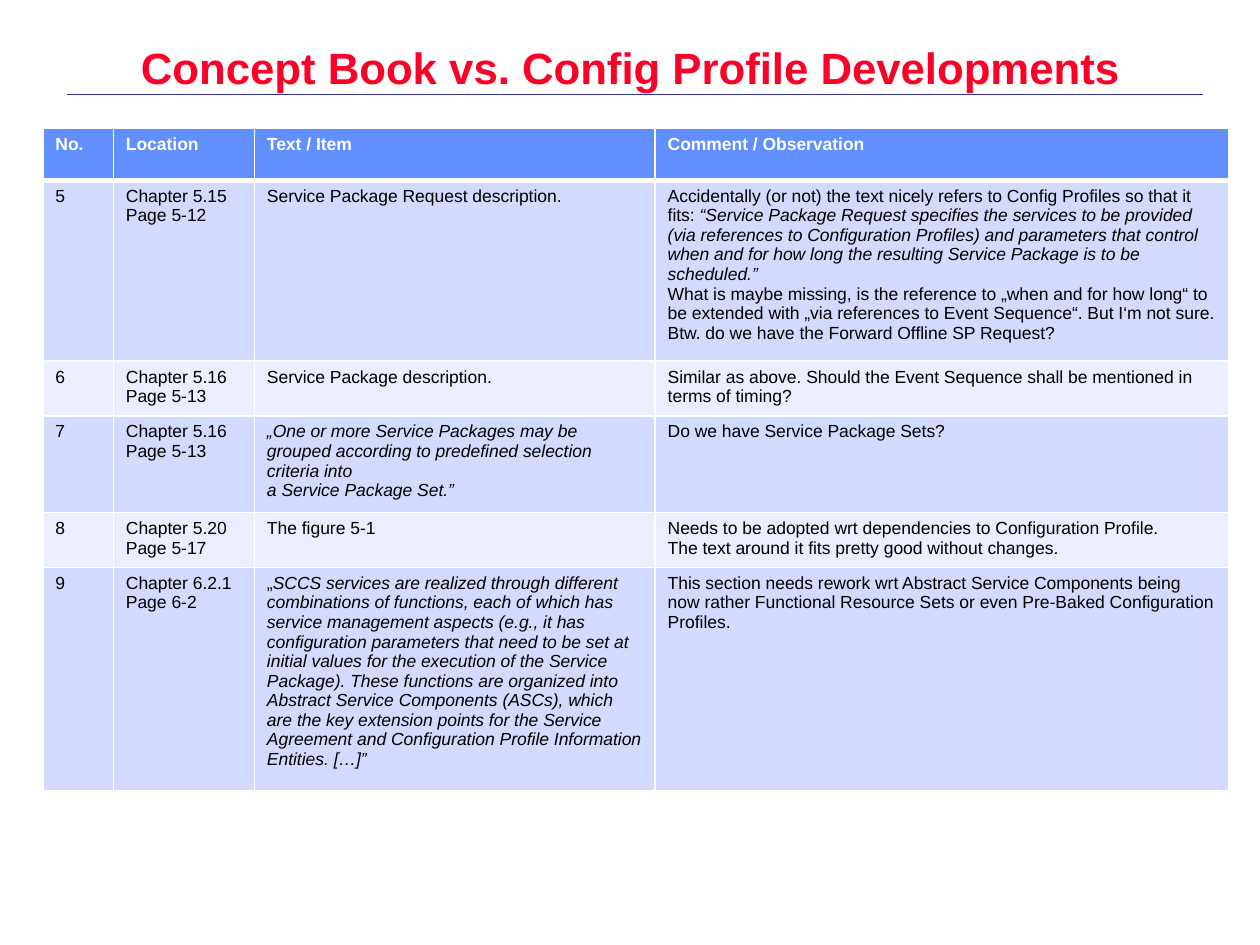
from lxml.etree import SubElement
from pptx import Presentation
from pptx.dml.color import RGBColor
from pptx.enum.shapes import MSO_CONNECTOR
from pptx.enum.text import MSO_ANCHOR, PP_ALIGN
from pptx.oxml.ns import qn
from pptx.util import Pt

COLORS = {
    "title": "FC0128",
    "rule": "333399",
    "header": "618FFD",
    "odd": "D2DBFE",
    "even": "EAEEFF",
    "white": "FFFFFF",
    "black": "000000",
}
COLUMN_WIDTHS = [40.3, 80.6, 229, 327.6]
ROW_HEIGHT = 29.6
HEADINGS = ["No.", "Location", "Text / Item", "Comment / Observation"]
FINDINGS = [
    [
        "5",
        "Chapter 5.15\nPage 5-12",
        "Service Package Request description.",
        "Accidentally (or not) the text nicely refers to Config Profiles so that it fits: "
        "*“Service Package Request specifies the services to be provided (via references to "
        "Configuration Profiles) and parameters that control when and for how long the "
        "resulting Service Package is to be scheduled.”*\n"
        "What is maybe missing, is the reference to „when and for how long“ to be extended "
        "with „via references to Event Sequence“. But I‘m not sure. "
        "Btw. do we have the Forward Offline SP Request?",
    ],
    [
        "6",
        "Chapter 5.16\nPage 5-13",
        "Service Package description.",
        "Similar as above. Should the Event Sequence shall be mentioned in terms of timing?",
    ],
    [
        "7",
        "Chapter 5.16\nPage 5-13",
        "*„One or more Service Packages may be grouped according to predefined selection "
        "criteria into*\n*a Service Package Set.”*",
        "Do we have Service Package Sets?",
    ],
    [
        "8",
        "Chapter 5.20\nPage 5-17",
        "The figure 5-1",
        "Needs to be adopted wrt dependencies to Configuration Profile.\n"
        "The text around it fits pretty good without changes.",
    ],
    [
        "9",
        "Chapter 6.2.1\nPage 6-2",
        "„*SCCS services are realized through different combinations of functions, each of "
        "which has*\n*service management aspects (e.g., it has configuration parameters that "
        "need to be set at initial values for the execution of the Service Package). These "
        "functions are organized into Abstract Service Components (ASCs), which are the key "
        "extension points for the Service Agreement and Configuration Profile Information "
        "Entities. […]”*",
        "This section needs rework wrt Abstract Service Components being now rather "
        "Functional Resource Sets or even Pre-Baked Configuration Profiles.",
    ],
]


def rgb(name):
    """Return the named colour."""
    return RGBColor.from_string(COLORS[name])


def format_font(font, color, **values):
    """Apply the colour and the given values to a font."""
    font.color.rgb = rgb(color)
    for key, value in {"name": "Arial", **values}.items():
        setattr(font, key, value)


def write_text(frame, text, color, **values):
    """Write lines as paragraphs, with asterisks around italic passages."""
    for index, line in enumerate(text.split("\n")):
        paragraph = frame.paragraphs[0] if index == 0 else frame.add_paragraph()
        for position, passage in enumerate(line.split("*")):
            if passage:
                run = paragraph.add_run()
                run.text = passage
                format_font(run.font, color, italic=position % 2 == 1, **values)


def add_heading(slide, left, top, width, height):
    """Place the slide title and the thin rule beneath it."""
    rule_top = top + 32.4
    rule = slide.shapes.add_connector(
        MSO_CONNECTOR.STRAIGHT, Pt(left + 2.2), Pt(rule_top), Pt(left + 651.6), Pt(rule_top)
    )
    rule.line.color.rgb = rgb("rule")
    rule.line.width = Pt(0.13)
    SubElement(rule.line._get_or_add_ln().getparent(), qn("a:effectLst"))

    title = slide.shapes.add_textbox(Pt(left), Pt(top), Pt(width), Pt(height)).text_frame
    layout = {"word_wrap": True, "vertical_anchor": MSO_ANCHOR.TOP, "margin_top": Pt(5)}
    for key, value in layout.items():
        setattr(title, key, value)
    write_text(title, "Concept Book vs. Config Profile Developments", "title",
               size=Pt(25), bold=True)
    title.paragraphs[0].alignment = PP_ALIGN.CENTER
    title.paragraphs[0].line_spacing = 0.9


def add_borders(cell, top, bottom):
    """Draw white borders around a cell."""
    properties = cell._tc.get_or_add_tcPr()
    for side, width in {"L": 1, "R": 1, "T": top, "B": bottom}.items():
        border = SubElement(properties, qn(f"a:ln{side}"), w=str(Pt(width)))
        fill = SubElement(border, qn("a:solidFill"))
        SubElement(fill, qn("a:srgbClr"), val=COLORS["white"])


def add_findings(slide, left, top):
    """Place the table of comments on the concept book."""
    rows = [HEADINGS, *FINDINGS]
    table = slide.shapes.add_table(
        len(rows), len(HEADINGS), Pt(left), Pt(top),
        Pt(sum(COLUMN_WIDTHS)), Pt(ROW_HEIGHT * len(rows)),
    ).table
    for column, width in zip(table.columns, COLUMN_WIDTHS):
        column.width = Pt(width)
    for number, texts in enumerate(rows):
        table.rows[number].height = Pt(ROW_HEIGHT)
        is_header = number == 0
        band = "header" if is_header else "odd" if number % 2 else "even"
        for cell, text in zip(table.rows[number].cells, texts):
            add_borders(cell, 3 if number == 1 else 1, 3 if is_header else 1)
            cell.fill.solid()
            cell.fill.fore_color.rgb = rgb(band)
            write_text(cell.text_frame, text, "white" if is_header else "black",
                       size=Pt(10), bold=is_header)


def main():
    """Build the slide and save it."""
    deck = Presentation()
    deck.slide_width, deck.slide_height = Pt(720), Pt(540)
    slide = deck.slides.add_slide(deck.slide_layouts[6])
    add_heading(slide, 36, 21.6, 648, 57.6)
    add_findings(slide, 24.5, 73.4)
    deck.save("out.pptx")


if __name__ == "__main__":
    main()
